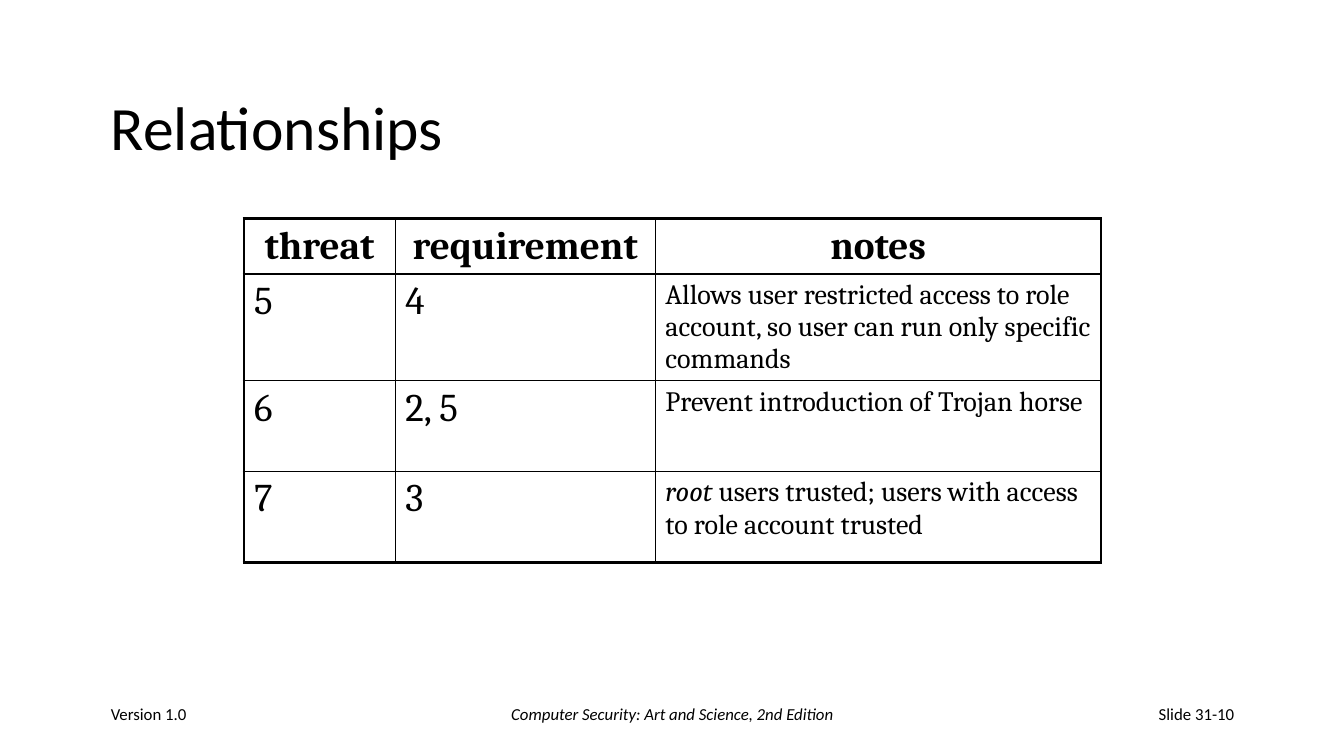
import pptx
import pptx.dml.color
import pptx.enum.text
import pptx.oxml
import pptx.oxml.ns
import pptx.util

Inches = pptx.util.Inches
Pt = pptx.util.Pt
ALIGN = pptx.enum.text.PP_ALIGN
MIDDLE = pptx.enum.text.MSO_ANCHOR.MIDDLE
BLACK = pptx.dml.color.RGBColor(0, 0, 0)
OUTER, INNER = 2.25, 1


def add_run(p, text, size, font, bold=False, italic=False):
    r = p.add_run()
    r.text = text
    r.font.size = Pt(size)
    r.font.name = font
    r.font.bold = bold
    r.font.italic = italic
    r.font.color.rgb = BLACK


def add_border(cell, side, width):
    ln = pptx.oxml.parse_xml(
        f'<a:ln{side} {pptx.oxml.ns.nsdecls("a")} w="{Pt(width)}">'
        f'<a:solidFill><a:srgbClr val="{BLACK}"/></a:solidFill></a:ln{side}>')
    cell._tc.get_or_add_tcPr().append(ln)


prs = pptx.Presentation()
prs.slide_width = Inches(13.33)
prs.slide_height = Inches(7.5)
s = prs.slides.add_slide(prs.slide_layouts[5])

title = s.shapes.title
title.left, title.top = Inches(1), Inches(0.67)
title.width, title.height = Inches(11.33), Inches(1.25)
tf = title.text_frame
tf.vertical_anchor = MIDDLE
p = tf.paragraphs[0]
p.alignment = ALIGN.LEFT
p.line_spacing = 0.9
add_run(p, "Relationships", 44, "Calibri")

headers = ["threat", "requirement", "notes"]
rows = [
    ["5", "4", "Allows user restricted access to role account, so user can run only specific commands"],
    ["6", "2, 5", "Prevent introduction of Trojan horse"],
    ["7", "3", " users trusted; users with access to role account trusted"],
]
col_widths = [1.5, 2.58, 4.42]
row_heights = [0.5, 0.9, 0.9, 0.9]
table = s.shapes.add_table(
    len(row_heights), len(col_widths), Inches(2.42), Inches(2.17),
    Inches(sum(col_widths)), Inches(sum(row_heights))).table
table.first_row = False
table.horz_banding = False
for column, width in zip(table.columns, col_widths):
    column.width = Inches(width)
for row, height in zip(table.rows, row_heights):
    row.height = Inches(height)

last_row, last_col = len(row_heights) - 1, len(col_widths) - 1
for i, texts in enumerate([headers] + rows):
    for j, text in enumerate(texts):
        cell = table.cell(i, j)
        on_edge = {"L": j == 0, "R": j == last_col, "T": i == 0, "B": i == last_row}
        for side, outer in on_edge.items():
            add_border(cell, side, OUTER if outer else INNER)
        cell.fill.background()
        p = cell.text_frame.paragraphs[0]
        p.alignment = ALIGN.CENTER if i == 0 else ALIGN.LEFT
        size = 20 if i > 0 and j == last_col else 28
        if i == last_row and j == last_col:
            add_run(p, "root", size, "Cambria", italic=True)
        add_run(p, text, size, "Cambria", bold=i == 0)

footers = [
    (1, 2.78, "Version 1.0", ALIGN.LEFT, False),
    (4.56, 4.22, "Computer Security: Art and Science, 2nd Edition", ALIGN.CENTER, True),
    (9.56, 2.78, "Slide 31-10", ALIGN.RIGHT, False),
]
for left, width, text, align, italic in footers:
    sp = s.shapes.add_textbox(Inches(left), Inches(6.83), Inches(width), Inches(0.5))
    tf = sp.text_frame
    tf.word_wrap = True
    tf.vertical_anchor = MIDDLE
    p = tf.paragraphs[0]
    p.alignment = align
    add_run(p, text, 12, "Calibri", italic=italic)

prs.save("out.pptx")
